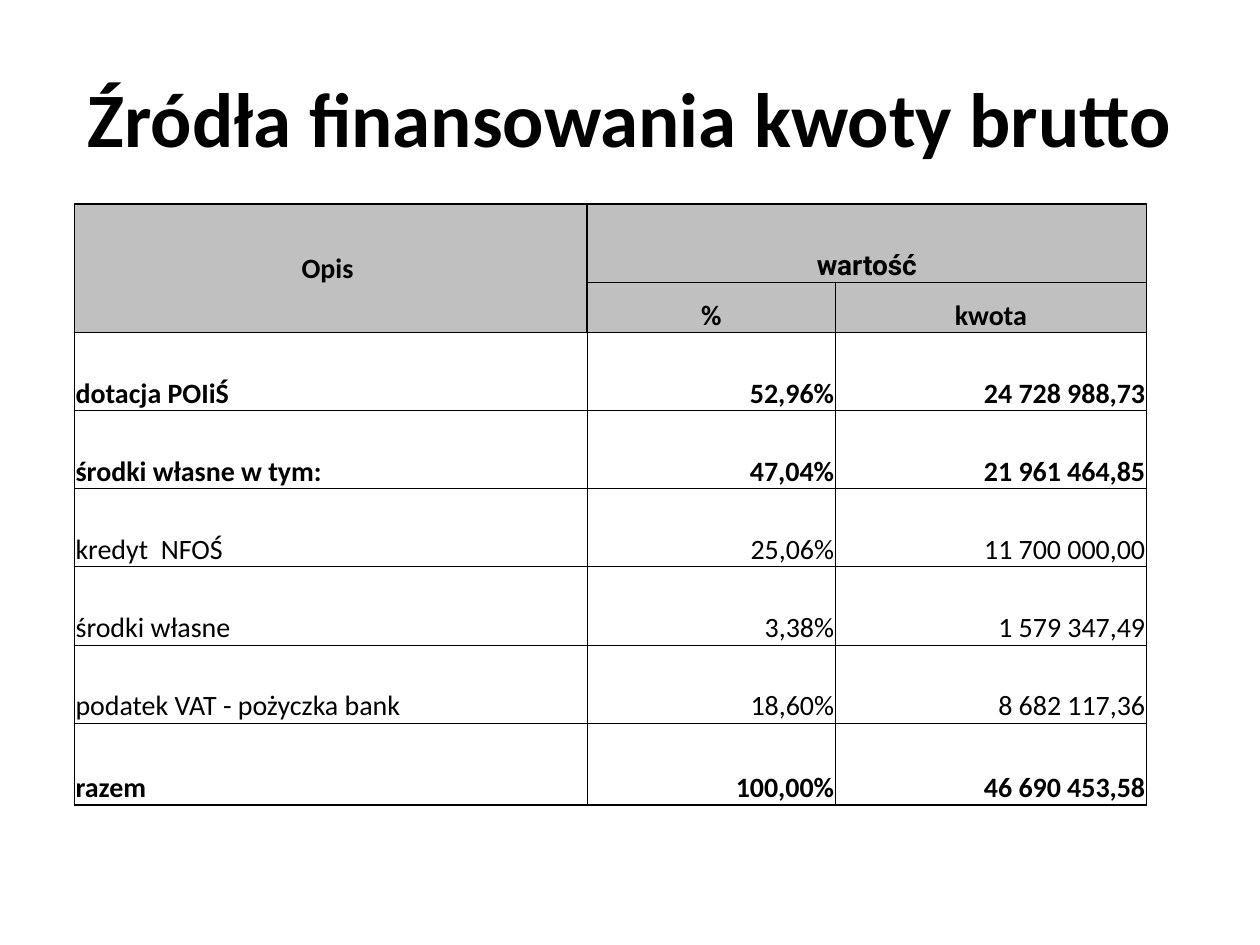
from dataclasses import dataclass

from lxml.etree import SubElement
from pptx import Presentation
from pptx.dml.color import RGBColor
from pptx.enum.text import MSO_ANCHOR as ANCHOR, PP_ALIGN as ALIGN
from pptx.oxml.ns import qn
from pptx.table import _Cell as Cell
from pptx.util import Inches, Pt

BLACK = RGBColor(0x00, 0x00, 0x00)
GREY = RGBColor(0xC0, 0xC0, 0xC0)
LIGHT_GREY = RGBColor(0xBF, 0xBF, 0xBF)

THIN, THICK = 0.5, 1
HEADER_ROWS = 2
COL_WIDTHS = [4.07, 1.97, 2.47]
ROW_HEIGHTS = [0.62, 0.4] + [0.62] * 5 + [0.65]


@dataclass
class Source:
    name: str
    share: str
    amount: str
    bold: bool = False


SOURCES = [
    Source("dotacja POIiŚ", "52,96%", "24 728 988,73", True),
    Source("środki własne w tym:", "47,04%", "21 961 464,85", True),
    Source("kredyt  NFOŚ", "25,06%", "11 700 000,00"),
    Source("środki własne", "3,38%", "1 579 347,49"),
    Source("podatek VAT - pożyczka bank", "18,60%", "8 682 117,36"),
    Source("razem", "100,00%", "46 690 453,58", True),
]


def write_cell(cell: Cell, text: str, align: ALIGN, bold: bool = True,
               font: str = "Calibri", anchor: ANCHOR = ANCHOR.BOTTOM) -> None:
    cell.margin_left = cell.margin_right = cell.margin_top = Inches(0.01)
    cell.margin_bottom = 0
    cell.vertical_anchor = anchor
    cell.text = text
    p = cell.text_frame.paragraphs[0]
    p.alignment = align
    f = p.runs[0].font
    f.name, f.size, f.bold = font, Pt(16), bold
    f.color.rgb = BLACK


def set_borders(cell: Cell, widths: dict[str, float]) -> None:
    tc_pr = cell._tc.get_or_add_tcPr()
    for i, (side, width) in enumerate(widths.items()):
        ln = SubElement(tc_pr, qn(f"a:ln{side}"), w=str(Pt(width)))
        fill = SubElement(ln, qn("a:solidFill"))
        SubElement(fill, qn("a:srgbClr"), val=str(BLACK))
        tc_pr.insert(i, ln)  # borders come before the cell fill


def border_widths(row: int, col: int) -> dict[str, float]:
    header = row < HEADER_ROWS
    thick = {
        "L": col == 0 or (header and col == 1),
        "R": header and col in (0, 2),
        "T": row == 0,
        "B": row == len(ROW_HEIGHTS) - 1,
    }
    return {side: THICK if on else THIN for side, on in thick.items()}


prs = Presentation()
prs.slide_width, prs.slide_height = Inches(10), Inches(7.5)
slide = prs.slides.add_slide(prs.slide_layouts[5])

# Title
title = slide.shapes.title
title.left, title.top = Inches(0.5), Inches(0.3)
title.width, title.height = Inches(9), Inches(1.25)
tf = title.text_frame
tf.text = "Źródła finansowania kwoty brutto"
tf.vertical_anchor = ANCHOR.MIDDLE
p = tf.paragraphs[0]
p.alignment = ALIGN.CENTER
f = p.runs[0].font
f.name, f.size, f.bold = "Calibri", Pt(44), True
f.color.rgb = BLACK

# Table grid
table = slide.shapes.add_table(
    len(ROW_HEIGHTS), len(COL_WIDTHS), Inches(0.59), Inches(1.62),
    Inches(sum(COL_WIDTHS)), Inches(sum(ROW_HEIGHTS))).table
table.first_row = table.horz_banding = False
for column, width in zip(table.columns, COL_WIDTHS):
    column.width = Inches(width)
for row, height in zip(table.rows, ROW_HEIGHTS):
    row.height = Inches(height)

# Header
table.cell(0, 0).merge(table.cell(1, 0))
table.cell(0, 1).merge(table.cell(0, 2))
write_cell(table.cell(0, 0), "Opis ", ALIGN.CENTER, anchor=ANCHOR.MIDDLE)
write_cell(table.cell(0, 1), "wartość", ALIGN.CENTER, font="Roboto")
write_cell(table.cell(1, 1), "%", ALIGN.CENTER)
write_cell(table.cell(1, 2), "kwota", ALIGN.CENTER)

# Financing sources
for r, source in enumerate(SOURCES, HEADER_ROWS):
    write_cell(table.cell(r, 0), source.name, ALIGN.LEFT, source.bold)
    write_cell(table.cell(r, 1), source.share, ALIGN.RIGHT, source.bold)
    write_cell(table.cell(r, 2), source.amount, ALIGN.RIGHT, source.bold)

# Fills and borders
for r in range(len(ROW_HEIGHTS)):
    for c in range(len(COL_WIDTHS)):
        cell = table.cell(r, c)
        if r < HEADER_ROWS:
            cell.fill.solid()
            cell.fill.fore_color.rgb = LIGHT_GREY if r == 0 and c > 0 else GREY
        else:
            cell.fill.background()
        set_borders(cell, border_widths(r, c))

prs.save("out.pptx")
